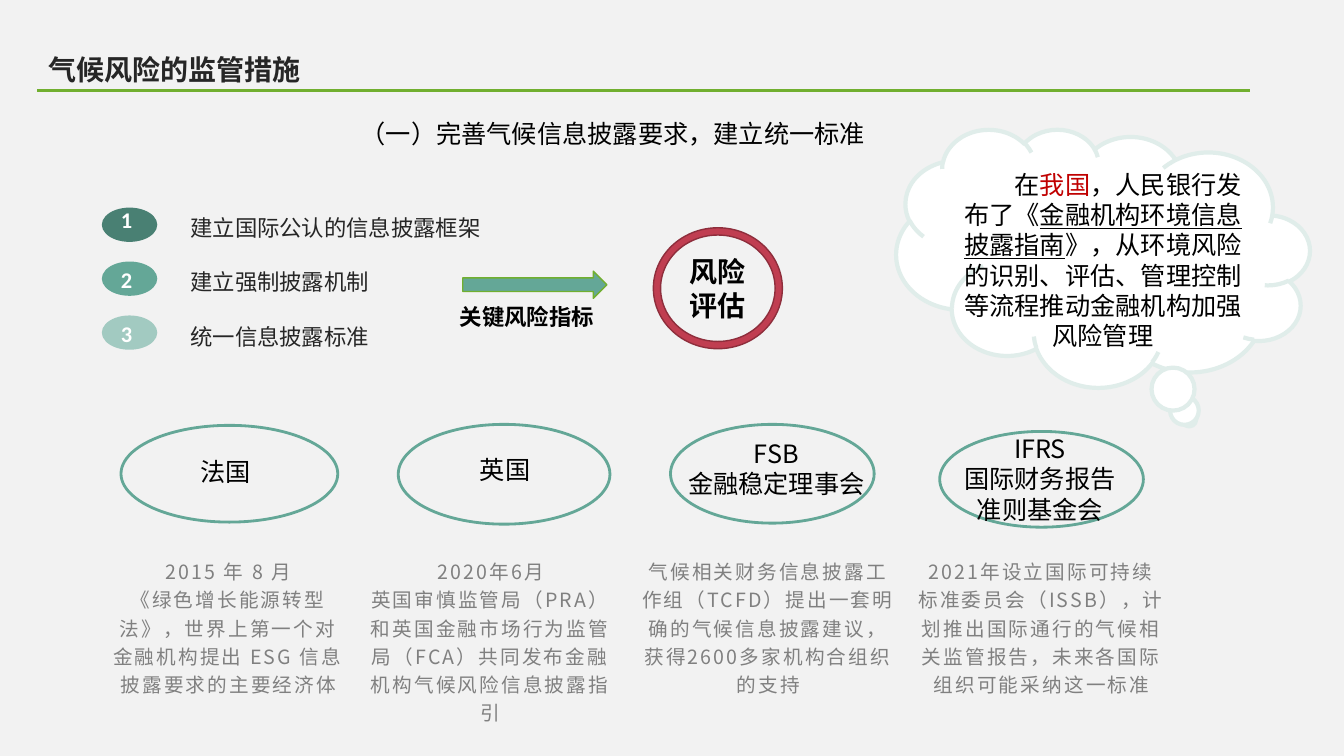
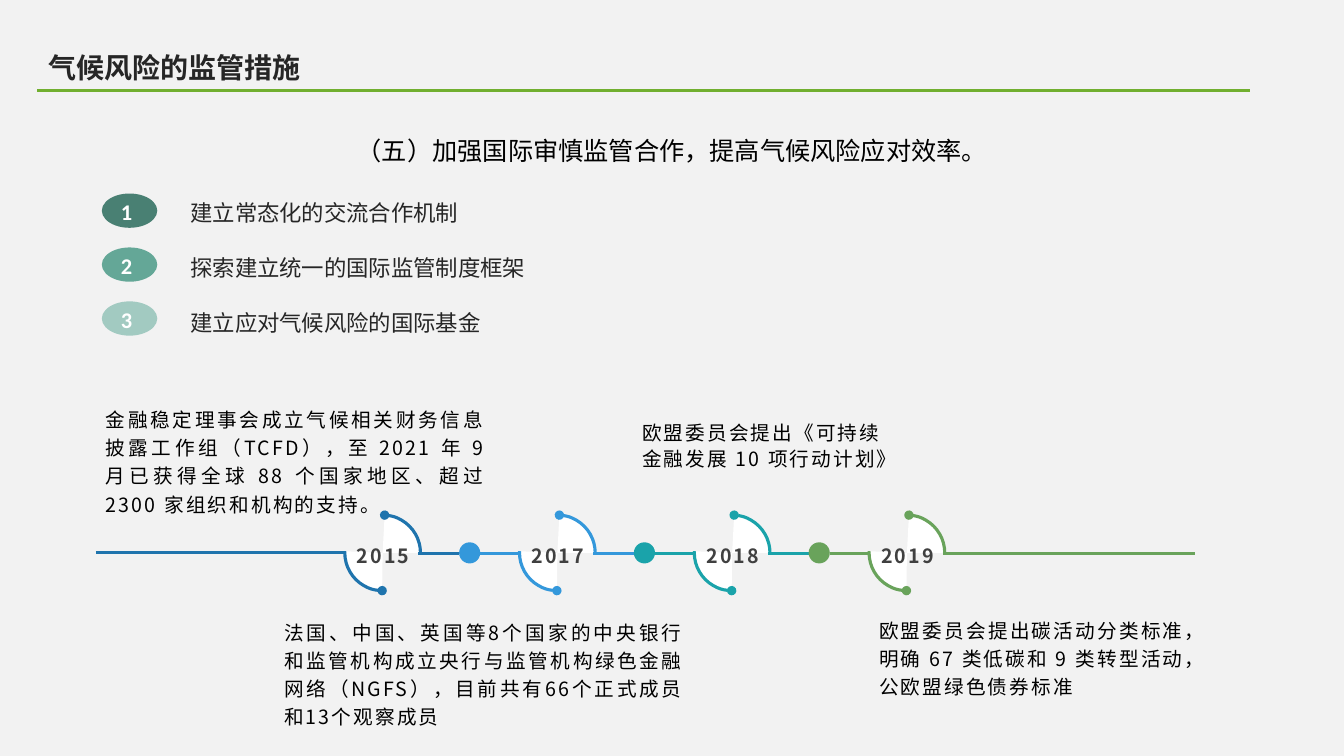
from lxml.etree import SubElement
from pptx import Presentation
from pptx.dml.color import RGBColor
from pptx.enum.lang import MSO_LANGUAGE_ID
from pptx.enum.shapes import MSO_CONNECTOR, MSO_SHAPE
from pptx.enum.text import MSO_ANCHOR, PP_ALIGN
from pptx.oxml.ns import qn
from pptx.util import Inches, Pt

HEX = {
    "back": "F2F2F2", "title": "262626", "rule": "71AF2F", "black": "000000",
    "white": "FFFFFF", "gray": "808080", "year": "404040", "red": "C00000",
    "deep": "498073", "teal": "64A797", "pale": "A2CAC1", "mist": "E0EDEA",
    "ring": "C03E51", "edge": "8E2E3C",
    "navy": "1F74AD", "blue": "3498DB", "aqua": "1AA3AA", "leaf": "69A35B",
}
JP, SC, LATIN = "Noto Sans CJK JP", "Noto Sans CJK SC", "Calibri"
LEFT, MID, FULL = PP_ALIGN.LEFT, PP_ALIGN.CENTER, PP_ALIGN.JUSTIFY
TITLE = "气候风险的监管措施"

PAGES = [
    {
        "title": 0.47, "head": ("（一）完善气候信息披露要求，建立统一标准", (3.48, 1.12, 5.2, 0.4)),
        "top": 2.06, "first": 2.0,
        "items": ["建立国际公认的信息披露框架", "建立强制披露机制", "统一信息披露标准"],
    },
    {
        "title": 0.45, "head": ("（五）加强国际审慎监管合作，提高气候风险应对效率。", (3.44, 1.29, 6.45, 0.4)),
        "top": 1.92, "first": 1.92,
        "items": ["建立常态化的交流合作机制", "探索建立统一的国际监管制度框架", "建立应对气候风险的国际基金"],
    },
]
SHADES = ["deep", "teal", "pale"]

BODIES = [
    ("法国", (1.81, 4.48, 0.86, 0.4), (1.2, 4.22, 2.15, 0.96), 1.01, 2.51,
     "2015 年 8 月\n《绿色增长能源转型法》，世界上第一个对金融机构提出 ESG 信息披露要求的主要经济体"),
    ("英国", (4.36, 4.46, 1.3, 0.4), (3.95, 4.21, 2.1, 0.99), 3.51, 2.71,
     "2020年6月\n英国审慎监管局（PRA）和英国金融市场行为监管局（FCA）共同发布金融机构气候风险信息披露指引"),
    ("FSB\n金融稳定理事会", (6.68, 4.3, 2.04, 0.71), (6.65, 4.21, 2.02, 0.98), 6.23, 2.78,
     "气候相关财务信息披露工作组（TCFD）提出一套明确的气候信息披露建议，获得2600多家机构合组织的支持"),
    ("IFRS\n国际财务报告准则基金会", (9.35, 4.25, 1.93, 1.01), (9.32, 4.28, 2.02, 0.95), 9.01, 2.64,
     "2021年设立国际可持续标准委员会（ISSB），计划推出国际通行的气候相关监管报告，未来各国际组织可能采纳这一标准"),
]
CLOUD = [
    ("在", "black", False),
    ("我国", "red", False),
    ("，人民银行发布了《", "black", False),
    ("金融机构环境信息披露指南", "black", True),
    ("》，从环境风险的识别、评估、管理控制等流程推动金融机构加强风险管理", "black", False),
]

YEARS = [("2015", "navy"), ("2017", "blue"), ("2018", "aqua"), ("2019", "leaf")]
EVENTS = [
    ("金融稳定理事会成立气候相关财务信息披露工作组（TCFD），至 2021 年 9 月已获得全球 88 个国家地区、超过 2300 家组织和机构的支持。",
     (0.95, 4, 3.96, 0.9), FULL, 1.2),
    ("法国、中国、英国等8个国家的中央银行和监管机构成立央行与监管机构绿色金融网络（NGFS），目前共有66个正式成员和13个观察成员",
     (2.72, 6.11, 4.16, 0.66), FULL, 1.2),
    ("欧盟委员会提出《可持续金融发展 10 项行动计划》", (6.27, 4.15, 2.76, 0.66), LEFT, 1.1),
    ("欧盟委员会提出碳活动分类标准，明确 67 类低碳和 9 类转型活动，公欧盟绿色债券标准",
     (8.62, 6.09, 3.23, 0.66), FULL, 1.2),
]
ARCS = [(54.43, 109.45), (163.83, 215.95)]


def color(name):
    return RGBColor.from_string(HEX[name])


def style(run, size, tint, face=JP, bold=False, gap=0):
    font = run.font
    font.size, font.name, font.bold = Pt(size), face, bold
    font.color.rgb = color(tint)
    font.language_id = MSO_LANGUAGE_ID.SIMPLIFIED_CHINESE
    props = run._r.get_or_add_rPr()
    if gap:
        props.set("spc", str(int(gap * 100)))
    SubElement(props, qn("a:ea")).set("typeface", face)


def write(slide, text, box, size, tint="black", align=LEFT, space=None, wrap=True, inset=0.05, **look):
    frame = slide.shapes.add_textbox(*map(Inches, box)).text_frame
    frame.word_wrap = wrap
    frame.margin_top = Inches(inset)
    frame.text = text
    for para in frame.paragraphs:
        para.alignment = align
        if space:
            para.line_spacing = space
        for run in para.runs:
            style(run, size, tint, **look)
    return frame


def draw(slide, kind, box, fill=None, line=None, width=1, adjust=()):
    shape = slide.shapes.add_shape(kind, *map(Inches, box))
    shape.shadow.inherit = False
    for i, value in enumerate(adjust):
        shape.adjustments[i] = value
    if fill:
        shape.fill.solid()
        shape.fill.fore_color.rgb = color(fill)
    else:
        shape.fill.background()
    if line:
        shape.line.color.rgb = color(line)
        shape.line.width = Pt(width)
    else:
        shape.line.fill.background()
    return shape


def rule(slide, start, end, y, tint, width):
    line = slide.shapes.add_connector(
        MSO_CONNECTOR.STRAIGHT, Inches(start), Inches(y), Inches(end), Inches(y))
    line.line.color.rgb = color(tint)
    line.line.width = Pt(width)
    SubElement(line._element.spPr, qn("a:effectLst"))


def start(deck, page):
    slide = deck.slides.add_slide(deck.slide_layouts[6])
    slide.background.fill.solid()
    slide.background.fill.fore_color.rgb = color("back")
    write(slide, TITLE, (0.38, page["title"], 6.19, 0.44), 20, "title", bold=True)
    rule(slide, 0.37, 12.4, 0.9, "rule", 2.5)
    text, box = page["head"]
    write(slide, text, box, 18, wrap=False)
    for i, (item, shade) in enumerate(zip(page["items"], SHADES)):
        top = page["top"] + i * 0.535
        write(slide, item, (1.79, page["top"] - 0.07 + i * 0.545, 9.04, 0.32), 16, "title", space=1.3)
        draw(slide, MSO_SHAPE.OVAL, (1.01, top, 0.55, 0.34), shade)
        write(slide, str(i + 1), (1.1, top if i else page["first"], 0.31, 0.37), 16, "white",
              face=LATIN, bold=True)
    return slide


def rules(deck):
    slide = start(deck, PAGES[0])
    for name, spot, oval, left, width, note in BODIES:
        draw(slide, MSO_SHAPE.OVAL, oval, line="teal", width=2)
        write(slide, name, spot, 18, align=MID)
        write(slide, note, (left, 5.46, width, 1.18), 14, "gray", MID, 1.2, gap=1.5)
    draw(slide, MSO_SHAPE.RIGHT_ARROW, (4.59, 2.69, 1.43, 0.27), "teal", "rule")
    write(slide, "关键风险指标", (4.3, 2.96, 1.85, 0.37), 16, align=MID, face=SC, bold=True)
    draw(slide, MSO_SHAPE.DONUT, (6.48, 2.26, 1.28, 1.2), "ring", "edge", adjust=[0.06])
    write(slide, "风险\n评估", (6.58, 2.48, 1.07, 0.77), 20, align=MID, face=SC, bold=True)

    cloud = draw(slide, MSO_SHAPE.CLOUD_CALLOUT, (8.89, 1.28, 4.1, 2.56), "white", "mist", 3)
    cloud._element.spPr.find(qn("a:xfrm")).set("flipH", "1")
    para = write(slide, "", (9.41, 1.63, 3.06, 1.92), 18, align=MID).paragraphs[0]
    props = para._p.get_or_add_pPr()
    props.set("marL", "0")
    props.set("indent", str(Inches(0.5)))
    for text, tint, under in CLOUD:
        run = para.add_run()
        run.text = text
        style(run, 18, tint, SC)
        run.font.underline = under


def events(deck):
    slide = start(deck, PAGES[1])
    for text, box, align, space in EVENTS:
        write(slide, text, box, 14, align=align, space=space, inset=0, gap=1.5)
    first, last, mid = 3.42, 8.62, 5.49
    step = (last - first) / (len(YEARS) - 1)
    for i, (year, tint) in enumerate(YEARS):
        left = first + i * step
        for angles in ARCS:
            arc = draw(slide, MSO_SHAPE.ARC, (left, 5.11, 0.75, 0.75), "white", tint, 2.25, angles)
            SubElement(arc.line._get_or_add_ln(), qn("a:headEnd")).set("type", "oval")
        frame = write(slide, year, (left - 0.01, 5.28, 0.78, 0.41), 14, "year", MID, 1.2,
                      face=SC, bold=True, gap=1.5)
        frame.vertical_anchor = MSO_ANCHOR.MIDDLE
        if i:
            dot = left - 0.6
            rule(slide, left - step + 0.73, dot, mid, YEARS[i - 1][1], 2.25)
            draw(slide, MSO_SHAPE.OVAL, (dot, 5.38, 0.21, 0.21), tint)
            rule(slide, dot + 0.21, left, mid, tint, 2.25)
    rule(slide, 0.95, first + 0.01, 5.48, YEARS[0][1], 2.25)
    rule(slide, last + 0.73, 11.85, mid, YEARS[-1][1], 2.25)


def main():
    deck = Presentation()
    deck.slide_width, deck.slide_height = Inches(13.33), Inches(7.5)
    rules(deck)
    events(deck)
    deck.save("out.pptx")


if __name__ == "__main__":
    main()
